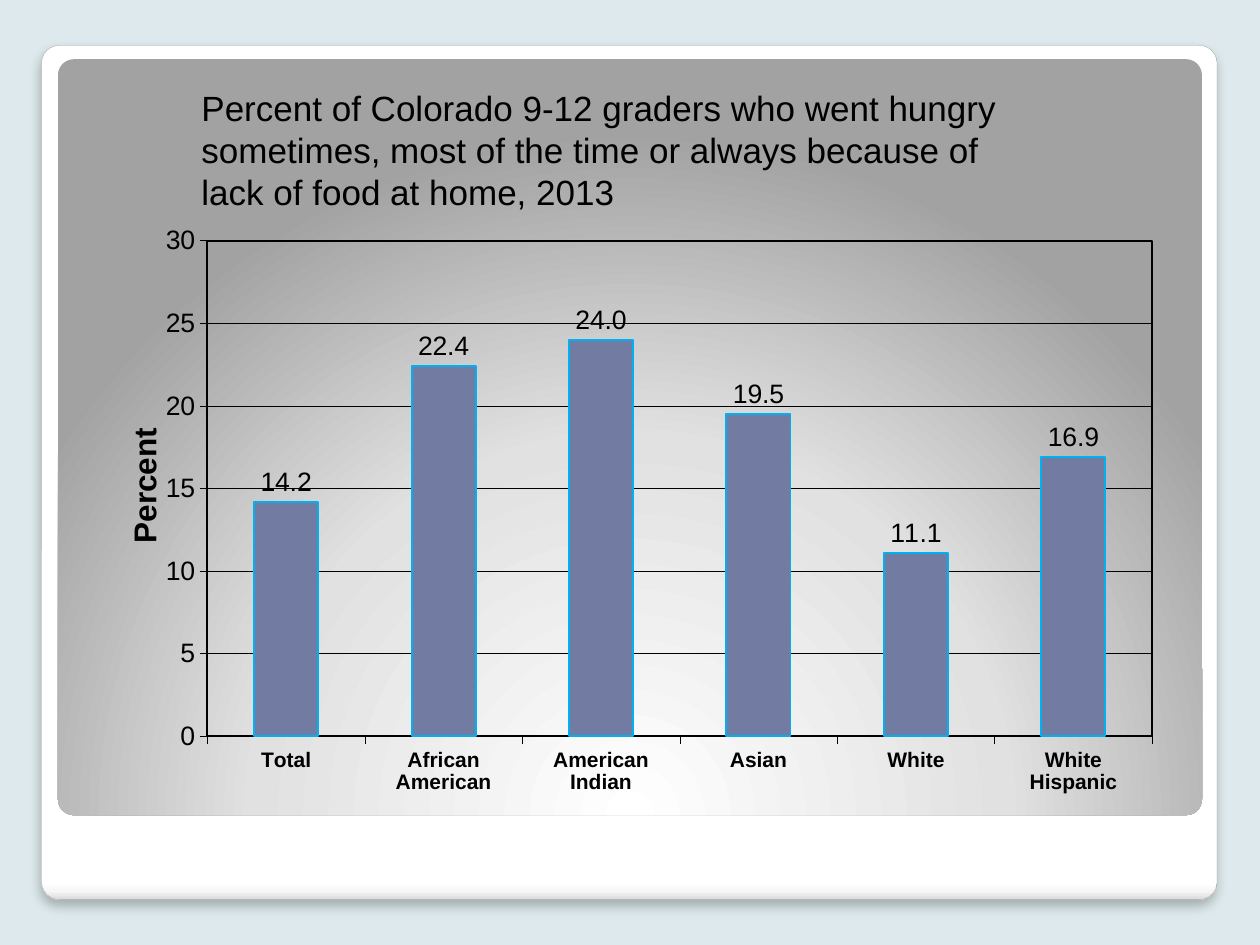
from dataclasses import dataclass

from lxml import etree
from pptx import Presentation
from pptx.chart.data import CategoryChartData
from pptx.dml.color import RGBColor
from pptx.enum.chart import XL_CHART_TYPE, XL_LABEL_POSITION, XL_TICK_MARK
from pptx.enum.shapes import MSO_SHAPE
from pptx.oxml import parse_xml
from pptx.oxml.ns import nsdecls, qn
from pptx.util import Inches, Pt

COLUMN = XL_CHART_TYPE.COLUMN_CLUSTERED
OUTSIDE_END = XL_LABEL_POSITION.OUTSIDE_END
TICK_OUT, TICK_NONE = XL_TICK_MARK.OUTSIDE, XL_TICK_MARK.NONE
ROUNDED = MSO_SHAPE.ROUNDED_RECTANGLE


@dataclass(frozen=True)
class Theme:
    """Colours, font and type sizes of the slide."""
    font: str = "Arial"
    back: str = "DDE9EC"
    ink: str = "000000"
    edge: str = "A4A4A4"
    bar: str = "727CA3"
    bar_edge: str = "00B0F0"
    title: float = 20
    axis_title: float = 18
    value: float = 15.2
    category: float = 12
    hairline: float = 0.27


def rgb(value):
    """Turn a hex string into a colour."""
    return RGBColor.from_string(value)


def style_font(font, theme, size, bold=False):
    """Apply the theme's face and ink to a font."""
    font.name, font.size, font.bold = theme.font, Pt(size), bold
    font.color.rgb = rgb(theme.ink)


def add_text(tf, text, theme, size, bold=False):
    """Write one formatted run into a text frame."""
    r = tf.paragraphs[0].add_run()
    r.text = text
    style_font(r.font, theme, size, bold)


def style_line(line, color, width):
    """Give a line its colour and width."""
    line.color.rgb, line.width = rgb(color), Pt(width)


def manual_layout(x, y, w=None, h=None):
    """Build a manual chart layout from fractions of the chart."""
    target = '<c:layoutTarget val="inner"/>' if w else ""
    modes = '<c:xMode val="edge"/><c:yMode val="edge"/>'
    sizes = "".join(f'<c:{k} val="{v}"/>' for k, v in zip("xywh", (x, y, w, h)) if v)
    return parse_xml(f'<c:layout {nsdecls("c")}><c:manualLayout>{target}{modes}{sizes}'
                     '</c:manualLayout></c:layout>')


def set_layout(parent, layout, before):
    """Put a layout into a chart element ahead of the named child."""
    for old in parent.findall(qn("c:layout")):
        parent.remove(old)
    parent.find(qn(before)).addprevious(layout)


class Deck:
    """Hold the theme and current slide and draw elements on it."""

    def __init__(self, prs, theme):
        """Add a blank slide with the theme background."""
        self.theme = theme
        self.s = prs.slides.add_slide(prs.slide_layouts[6])
        fill = self.s.background.fill
        fill.solid()
        fill.fore_color.rgb = rgb(theme.back)

    def panel(self, x, y, w, h, stops, direction, edge=None, shadow=None):
        """Draw a rounded panel with a gradient fill."""
        sp = self.s.shapes.add_shape(ROUNDED, Inches(x), Inches(y), Inches(w), Inches(h))
        sp.adjustments[0] = 0.021
        sp.shadow.inherit = False
        sp.fill.background()
        if edge:
            style_line(sp.line, edge, 0.16)
        else:
            sp.line.fill.background()
        marks = "".join(f'<a:gs pos="{pos * 1000}"><a:srgbClr val="{color}"/></a:gs>'
                        for pos, color in stops)
        pr = sp._element.spPr
        pr.replace(pr.find(qn("a:noFill")), parse_xml(
            f'<a:gradFill {nsdecls("a")} rotWithShape="1"><a:gsLst>{marks}</a:gsLst>'
            f'{direction}</a:gradFill>'))
        if shadow:
            pr.find(qn("a:effectLst")).append(parse_xml(shadow))

    def text(self, x, y, w, h, text, size):
        """Draw a wrapped text box."""
        tf = self.s.shapes.add_textbox(Inches(x), Inches(y), Inches(w), Inches(h)).text_frame
        tf.word_wrap = True
        add_text(tf, text, self.theme, size)

    def style_axis(self, axis, size, bold=False):
        """Give an axis its ticks, line and label font."""
        axis.major_tick_mark, axis.minor_tick_mark = TICK_OUT, TICK_NONE
        style_line(axis.format.line, self.theme.ink, self.theme.hairline)
        style_font(axis.tick_labels.font, self.theme, size, bold)

    def column_chart(self, x, y, w, h, values, axis_title):
        """Draw a labelled column chart from a dict of values."""
        t = self.theme
        data = CategoryChartData(number_format="0.0")
        data.categories = list(values)
        data.add_series("Series 1", list(values.values()))
        chart = self.s.shapes.add_chart(
            COLUMN, Inches(x), Inches(y), Inches(w), Inches(h), data).chart
        chart.has_legend = chart.has_title = False
        style_font(chart.font, t, t.value)

        plot = chart.plots[0]
        plot.gap_width, plot.vary_by_categories = 146, False
        plot.has_data_labels = True
        labels = plot.data_labels
        labels.show_value, labels.position = True, OUTSIDE_END
        labels.number_format, labels.number_format_is_linked = "0.0", False
        style_font(labels.font, t, t.value)
        bars = plot.series[0].format
        bars.fill.solid()
        bars.fill.fore_color.rgb = rgb(t.bar)
        style_line(bars.line, t.bar_edge, 1.08)

        self.style_axis(chart.category_axis, t.category, bold=True)
        axis = chart.value_axis
        self.style_axis(axis, t.value)
        axis.minimum_scale, axis.maximum_scale, axis.major_unit = 0, 30, 5
        axis.tick_labels.number_format = "#,##0"
        axis.tick_labels.number_format_is_linked = False
        style_line(axis.major_gridlines.format.line, t.ink, t.hairline)
        add_text(axis.axis_title.text_frame, axis_title, t, t.axis_title, bold=True)
        set_layout(axis.axis_title._element, manual_layout(0.05, 0.29), "c:overlay")

        area = chart._chartSpace.chart.plotArea
        set_layout(area, manual_layout(0.131, 0.054, 0.857, 0.644), "c:barChart")
        frame = etree.SubElement(area, qn("c:spPr"))
        etree.SubElement(frame, qn("a:noFill"))
        frame.append(parse_xml(
            f'<a:ln {nsdecls("a")} w="{Pt(1.08)}"><a:solidFill><a:srgbClr val="{t.ink}"/>'
            '</a:solidFill></a:ln>'))


def main():
    """Build the slide and save it."""
    prs = Presentation()
    prs.slide_width, prs.slide_height = Inches(10), Inches(7.5)
    theme = Theme()
    deck = Deck(prs, theme)
    shadow = (f'<a:outerShdw {nsdecls("a")} blurRad="{Pt(6)}" dist="{Pt(4)}" dir="5400000" '
              'algn="t" rotWithShape="0"><a:srgbClr val="000000"><a:alpha val="25000"/>'
              '</a:srgbClr></a:outerShdw>')
    deck.panel(0.33, 0.36, 9.33, 6.78,
               [(0, "FFFFFF"), (98, "FFFFFF"), (99, "F7F7F7"), (100, "DADADA")],
               '<a:lin ang="5400000" scaled="0"/>', theme.edge, shadow)
    deck.panel(0.46, 0.47, 9.08, 6, [(0, "FFFFFF"), (55, "E1E1E1"), (100, "A2A2A2")],
               '<a:path path="circle"><a:fillToRect l="50000" t="175000" r="50000" '
               'b="-75000"/></a:path>')
    deck.column_chart(0.5, 1.58, 8.75, 6.11, {
        "Total": 14.2, "African American": 22.4, "American Indian": 24.0,
        "Asian": 19.5, "White": 11.1, "White Hispanic": 16.9}, "Percent")
    deck.text(1.5, 0.64, 6.92, 1.11,
              "Percent of Colorado 9-12 graders who went hungry sometimes, most of the time "
              "or always because of lack of food at home, 2013", theme.title)
    prs.save("out.pptx")


if __name__ == "__main__":
    main()
